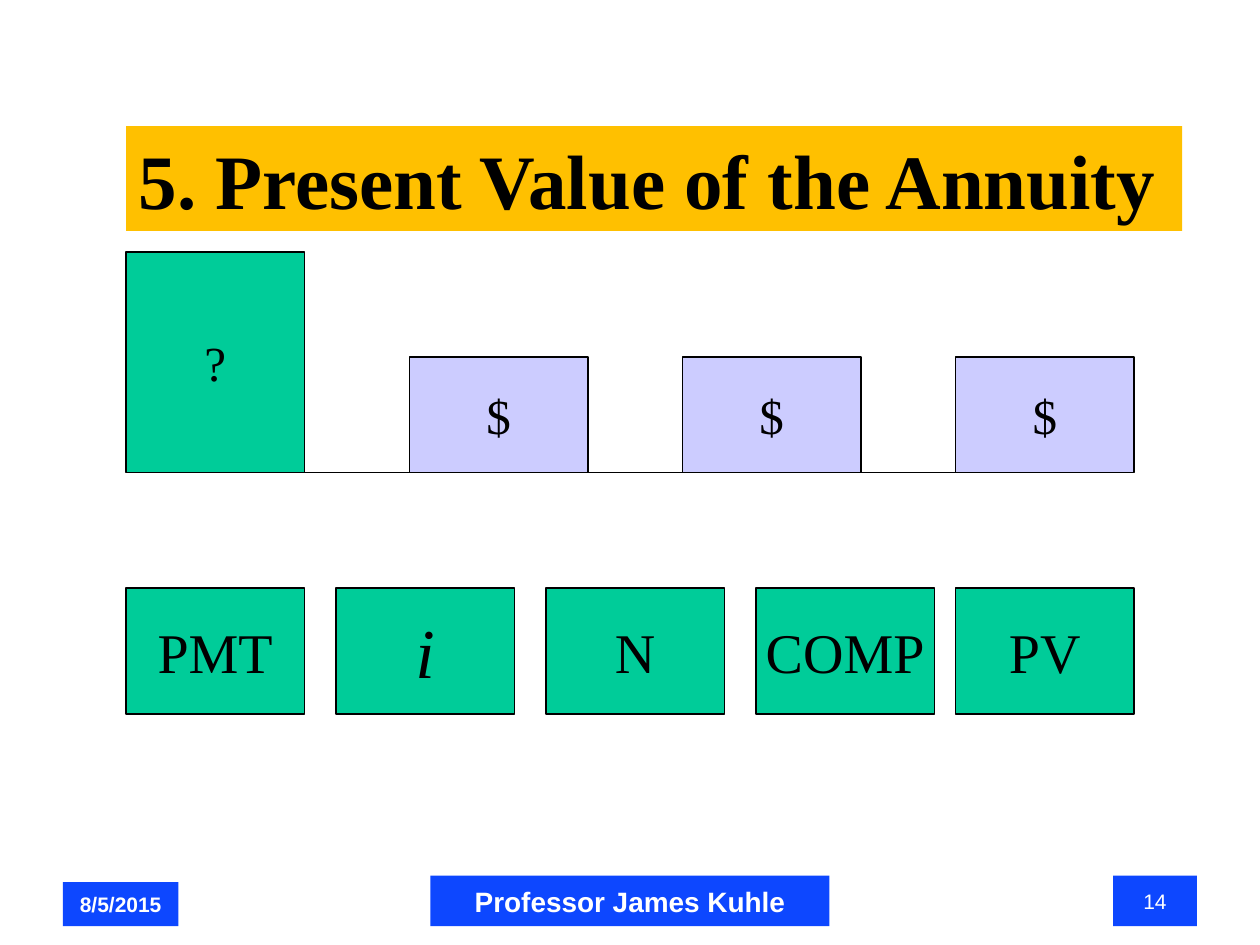
from lxml import etree
from pptx import Presentation
from pptx.dml.color import RGBColor
from pptx.enum import shapes, text
from pptx.oxml.ns import qn
from pptx.util import Pt

COLORS = {"black": "000000", "white": "FFFFFF", "gold": "FFC000",
          "green": "00CC99", "lilac": "CCCCFF", "blue": "0D47FF"}
SERIF, SANS = "Times New Roman", "Arial"

TITLE = "5. Present Value of the Annuity"
PRESENT_VALUE = "?"
PAYMENTS = ["$", "$", "$"]
# label, left, font format
KEYS = [
    ("PMT", 72, {"size": 32}),
    ("i", 192, {"size": 40, "italic": True}),
    ("N", 312, {"size": 32}),
    ("COMP", 432, {"size": 32}),
    ("PV", 546, {"size": 32}),
]
# label, left, width, height, font format
FOOTER = [
    ("8/5/2015", 36, 66, 25.2, {"size": 12, "bold": True}),
    ("Professor James Kuhle", 246, 228, 28.8, {"size": 16, "bold": True}),
    ("14", 636, 48, 28.8, {"size": 12}),
]

LEFT, BOX_WIDTH = 72, 102
RIGHT = 546 + BOX_WIDTH
BASELINE = 270
PRESENT_VALUE_HEIGHT, PAYMENT_HEIGHT = 126, 66
FIRST_PAYMENT, PAYMENT_STEP = 234, 156
KEY_TOP, KEY_HEIGHT = 336, 72
FOOTER_BOTTOM = 529.2


def rgb(name):
    return RGBColor.from_string(COLORS[name])


def write(shape, words, *, size, font=SERIF, color="black", bold=False, italic=False,
          align=text.PP_ALIGN.CENTER, anchor=text.MSO_ANCHOR.MIDDLE, wrap=True):
    frame = shape.text_frame
    frame.auto_size = text.MSO_AUTO_SIZE.NONE
    frame.word_wrap = wrap
    frame.vertical_anchor = anchor
    paragraph = frame.paragraphs[0]
    paragraph.alignment = align
    run = paragraph.add_run()
    run.text = words
    run.font.name, run.font.size = font, Pt(size)
    run.font.bold, run.font.italic = bold, italic
    run.font.color.rgb = rgb(color)


def add_box(slide, left, top, width, height, fill, outlined=True,
            preset=shapes.MSO_SHAPE.RECTANGLE):
    box = slide.shapes.add_shape(preset, Pt(left), Pt(top), Pt(width), Pt(height))
    box.shadow.inherit = False
    box.fill.solid()
    box.fill.fore_color.rgb = rgb(fill)
    if outlined:
        box.line.color.rgb = rgb("black")
        box.line.width = Pt(0.75)
    else:
        box.line.fill.background()
    return box


def add_title(slide):
    title = slide.shapes.title
    title.left, title.top, title.width, title.height = Pt(LEFT), Pt(72), Pt(603.5), Pt(60)
    title.fill.solid()
    title.fill.fore_color.rgb = rgb("gold")
    write(title, TITLE, size=44, bold=True, align=text.PP_ALIGN.LEFT,
          anchor=text.MSO_ANCHOR.TOP)


def add_cash_flow(slide, words, left, height, fill):
    """Add a bar that stands on the timeline."""
    bar = add_box(slide, left, BASELINE - height, BOX_WIDTH, height, fill,
                  preset=shapes.MSO_SHAPE.FLOWCHART_PROCESS)
    write(bar, words, size=28, wrap=False)


def add_timeline(slide):
    timeline = slide.shapes.add_connector(shapes.MSO_CONNECTOR.STRAIGHT, Pt(LEFT),
                                          Pt(BASELINE), Pt(RIGHT), Pt(BASELINE))
    timeline.line.color.rgb = rgb("black")
    timeline.line.width = Pt(0.75)
    etree.SubElement(timeline._element.spPr, qn("a:effectLst"))


def main():
    deck = Presentation()
    deck.slide_width, deck.slide_height = Pt(720), Pt(540)
    slide = deck.slides.add_slide(deck.slide_layouts[5])

    add_title(slide)
    add_cash_flow(slide, PRESENT_VALUE, LEFT, PRESENT_VALUE_HEIGHT, "green")
    for period, payment in enumerate(PAYMENTS):
        add_cash_flow(slide, payment, FIRST_PAYMENT + period * PAYMENT_STEP,
                      PAYMENT_HEIGHT, "lilac")
    add_timeline(slide)

    for label, left, style in KEYS:
        key = add_box(slide, left, KEY_TOP, BOX_WIDTH, KEY_HEIGHT, "green")
        write(key, label, wrap=False, **style)

    for label, left, width, height, style in FOOTER:
        panel = add_box(slide, left, FOOTER_BOTTOM - height, width, height, "blue",
                        outlined=False)
        write(panel, label, font=SANS, color="white", **style)

    deck.save("out.pptx")


if __name__ == "__main__":
    main()
